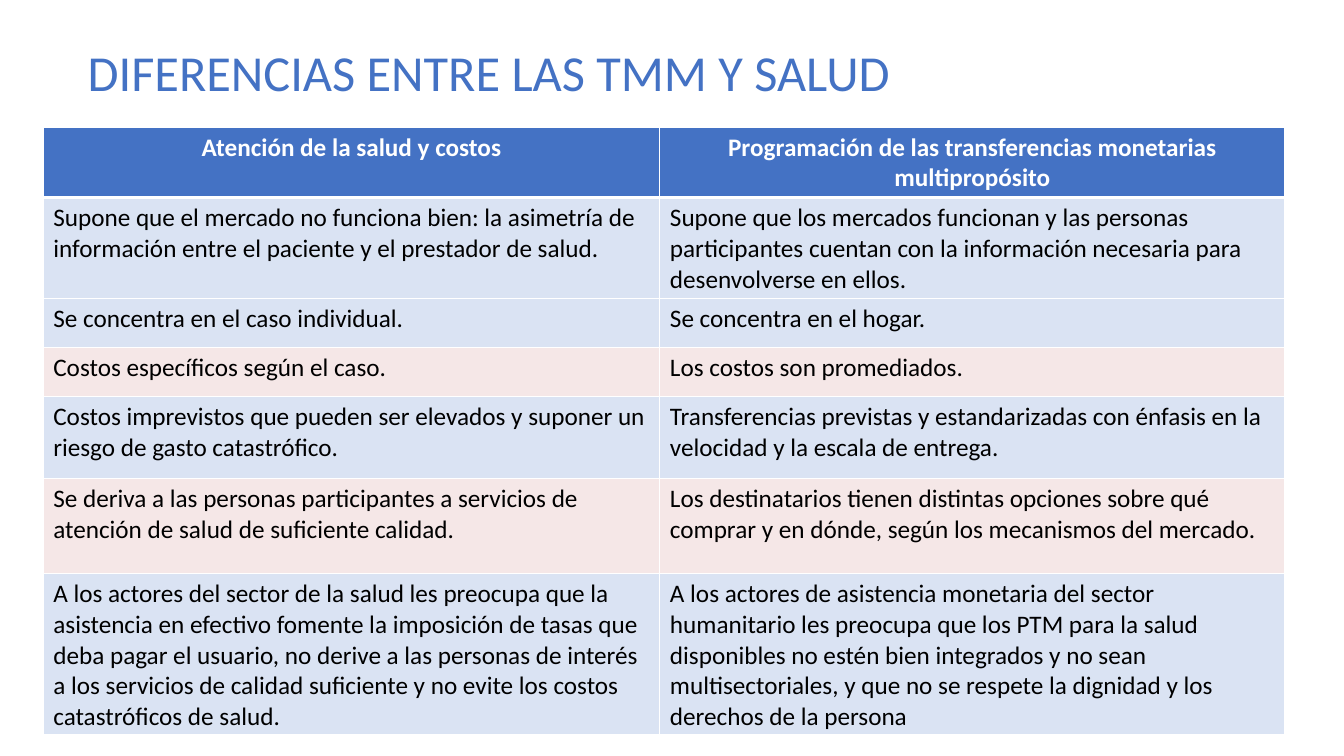
from lxml import etree
from pptx import Presentation
from pptx.dml.color import RGBColor
from pptx.enum import text
from pptx.oxml.ns import qn
from pptx.util import Cm, Pt

BLUE = RGBColor(0x44, 0x72, 0xC4)
PALE_BLUE = RGBColor(0xDA, 0xE3, 0xF3)
PALE_PINK = RGBColor(0xF5, 0xE7, 0xE7)
WHITE = RGBColor(0xFF, 0xFF, 0xFF)
BLACK = RGBColor(0, 0, 0)

# Row height in cm, fill, left text, right text
ROWS = [
    (1.63, BLUE, "Atención de la salud y costos",
     "Programación de las transferencias monetarias multipropósito"),
    (2.31, PALE_BLUE,
     "Supone que el mercado no funciona bien: la asimetría de información "
     "entre el paciente y el prestador de salud.",
     "Supone que los mercados funcionan y las personas participantes cuentan "
     "con la información necesaria para desenvolverse en ellos."),
    (1.24, PALE_BLUE, "Se concentra en el caso individual.",
     "Se concentra en el hogar."),
    (1.24, PALE_PINK, "Costos específicos según el caso.",
     "Los costos son promediados."),
    (2.06, PALE_BLUE,
     "Costos imprevistos que pueden ser elevados y suponer un riesgo de gasto "
     "catastrófico.",
     "Transferencias previstas y estandarizadas con énfasis en la velocidad y "
     "la escala de entrega."),
    (2.39, PALE_PINK,
     "Se deriva a las personas participantes a servicios de atención de salud "
     "de suficiente calidad.",
     "Los destinatarios tienen distintas opciones sobre qué comprar y en "
     "dónde, según los mecanismos del mercado."),
    (3.71, PALE_BLUE,
     "A los actores del sector de la salud les preocupa que la asistencia en "
     "efectivo fomente la imposición de tasas que deba pagar el usuario, no "
     "derive a las personas de interés a los servicios de calidad suficiente "
     "y no evite los costos catastróficos de salud.",
     "A los actores de asistencia monetaria del sector humanitario les "
     "preocupa que los PTM para la salud disponibles no estén bien integrados "
     "y no sean multisectoriales, y que no se respete la dignidad y los "
     "derechos de la persona"),
]
COLUMN_WIDTHS = (15.54, 15.75)


def style_text(paragraph, size, color, bold=False):
    font = paragraph.font
    font.name, font.size, font.bold = "Calibri", Pt(size), bold
    font.color.rgb = color


def add_borders(cell, bottom_width):
    """Draw white cell edges, 1 pt except for the bottom one."""
    properties = cell._tc.get_or_add_tcPr()
    edges = (("a:lnL", 1), ("a:lnR", 1), ("a:lnT", 1), ("a:lnB", bottom_width))
    for tag, width in edges:
        line = etree.SubElement(properties, qn(tag), w=str(Pt(width)))
        fill = etree.SubElement(line, qn("a:solidFill"))
        etree.SubElement(fill, qn("a:srgbClr"), val=str(WHITE))


deck = Presentation()
deck.slide_width, deck.slide_height = Cm(33.87), Cm(19.05)
page = deck.slides.add_slide(deck.slide_layouts[6])

title = page.shapes.add_textbox(Cm(1.96), Cm(0.91), Cm(29.74), Cm(2.51))
title.text_frame.word_wrap = True
title.text_frame.vertical_anchor = text.MSO_ANCHOR.TOP
heading = title.text_frame.paragraphs[0]
heading.text = "DIFERENCIAS ENTRE LAS TMM Y SALUD"
style_text(heading, 36, BLUE)

frame = page.shapes.add_table(len(ROWS), 2, Cm(1.09), Cm(3.2),
                              Cm(sum(COLUMN_WIDTHS)),
                              Cm(sum(row[0] for row in ROWS)))
table = frame.table
for column, width in zip(table.columns, COLUMN_WIDTHS):
    column.width = Cm(width)

for index, (height, color, *texts) in enumerate(ROWS):
    is_header = index == 0
    table.rows[index].height = Cm(height)
    for cell, words in zip(table.rows[index].cells, texts):
        add_borders(cell, 3 if is_header else 1)
        cell.fill.solid()
        cell.fill.fore_color.rgb = color
        paragraph = cell.text_frame.paragraphs[0]
        paragraph.text = words
        if is_header:
            paragraph.alignment = text.PP_ALIGN.CENTER
        style_text(paragraph, 18, WHITE if is_header else BLACK, is_header)

deck.save("out.pptx")
